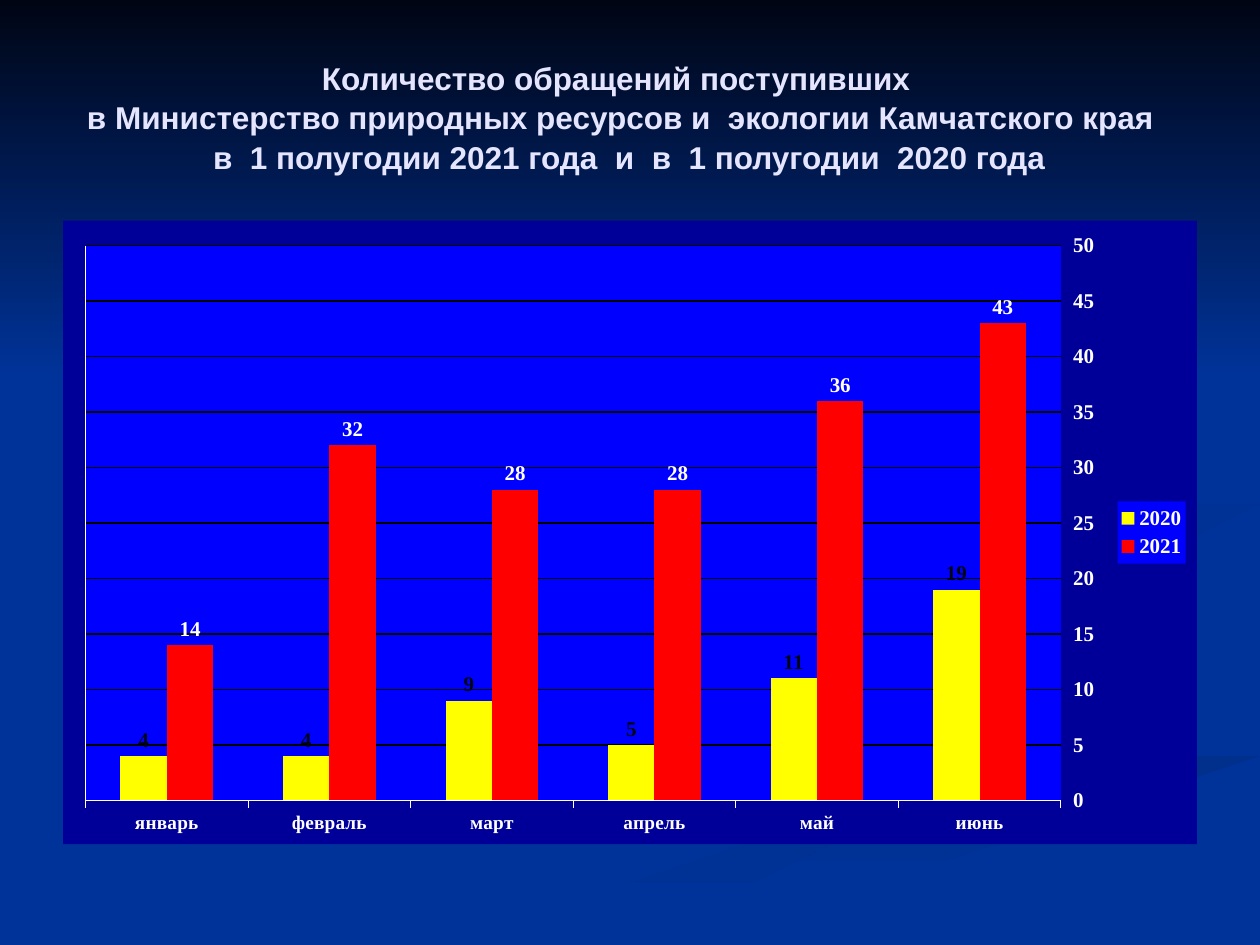
from dataclasses import dataclass

from pptx import Presentation
from pptx.chart.data import CategoryChartData
from pptx.dml.color import RGBColor
from pptx.enum.chart import XL_CHART_TYPE, XL_LABEL_POSITION, XL_LEGEND_POSITION, XL_TICK_LABEL_POSITION, XL_TICK_MARK
from pptx.enum.text import MSO_ANCHOR, PP_ALIGN
from pptx.oxml import parse_xml
from pptx.oxml.ns import nsdecls, qn
from pptx.util import Cm, Pt


@dataclass(frozen=True)
class Theme:
    background: str = "003399"
    shade: str = "002F8C"
    night: str = "000514"
    title: str = "E5E5FF"
    frame: str = "000099"
    plot: str = "0000FF"
    light: str = "FFFFFF"
    grid: str = "000000"
    title_font: str = "Arial"
    chart_font: str = "Times New Roman"
    title_size: int = 18
    chart_size: int = 10
    month_size: int = 11
    label_size: int = 12


@dataclass(frozen=True)
class Ribbon:
    points: tuple
    start: str
    end: str
    angle: int


@dataclass(frozen=True)
class Year:
    name: str
    values: tuple
    color: str
    label_color: str


THEME = Theme()
INCH = Cm(2.54)
MONTHS = ("январь", "февраль", "март", "апрель", "май", "июнь")
YEARS = (
    Year("2020", (4, 4, 9, 5, 11, 19), "FFFF00", THEME.night),
    Year("2021", (14, 32, 28, 28, 36, 43), "FF0000", THEME.light),
)
TITLE = (
    "Количество обращений поступивших ",
    "в Министерство природных ресурсов и  экологии Камчатского края",
    "  в  1 полугодии 2021 года  и  в  1 полугодии  2020 года",
)
RIBBONS = (
    Ribbon(((5.7, 4.6), (7.8, 5.5), (8, 5.8), (5.6, 6.65), (3.6, 7.49), (3, 7.49), (5, 6.6), (7.8, 5.8)),
           THEME.background, "003193", 0),
    Ribbon(((5.03, 7.49), (5.7, 7.49), (7.2, 6.8), (9.98, 6.09), (9.98, 5.81), (7.6, 6.5), (6, 7.06)),
           THEME.shade, THEME.background, 90),
    Ribbon(((7.81, 4.6), (8.26, 4.96), (8.1, 4.65), (9.98, 4.2), (9.98, 4.02), (8.2, 4.35)),
           "003091", THEME.background, 45),
    Ribbon(((0, 0), (0, 3.08), (10, 3.08), (10, 0)), THEME.night, THEME.background, 90),
)


def rgb(color: str) -> RGBColor:
    return RGBColor.from_string(color)


def style_font(font, *, size: int, color: str, name: str = THEME.chart_font, bold: bool = True) -> None:
    font.size, font.name, font.bold = Pt(size), name, bold
    font.color.rgb = rgb(color)


def draw_ribbon(page, ribbon: Ribbon) -> None:
    builder = page.shapes.build_freeform(*ribbon.points[0], scale=INCH)
    builder.add_line_segments(ribbon.points[1:], close=True)
    shape = builder.convert_to_shape()
    shape.shadow.inherit = False
    shape.line.fill.background()
    shape.fill.gradient()
    shape.fill.gradient_angle = -ribbon.angle % 360
    for stop, color in zip(shape.fill.gradient_stops, (ribbon.start, ribbon.end)):
        stop.color.rgb = rgb(color)


def add_text(page, lines: tuple, *, left, top, width, height, **font_format) -> None:
    box = page.shapes.add_textbox(left, top, width, height)
    box.text_frame.word_wrap = True
    box.text_frame.vertical_anchor = MSO_ANCHOR.MIDDLE
    para = box.text_frame.paragraphs[0]
    para.alignment = PP_ALIGN.CENTER
    para.line_spacing = 1.04
    for index, line in enumerate(lines):
        if index:
            para.add_line_break()
        span = para.add_run()
        span.text = line
        style_font(span.font, **font_format)


def solid_properties(color: str):
    return parse_xml(
        f'<c:spPr {nsdecls("c", "a")}><a:solidFill><a:srgbClr val="{color}"/></a:solidFill>'
        "<a:ln><a:noFill/></a:ln></c:spPr>"
    )


def manual_layout(x: float, y: float, width: float, height: float, *, inner: bool = False):
    target = '<c:layoutTarget val="inner"/>' if inner else ""
    sizes = "".join(f'<c:{key} val="{value}"/>' for key, value in zip("xywh", (x, y, width, height)))
    return parse_xml(
        f'<c:layout {nsdecls("c")}><c:manualLayout>{target}<c:xMode val="edge"/><c:yMode val="edge"/>'
        f"{sizes}</c:manualLayout></c:layout>"
    )


def place_chart_parts(chart) -> None:
    frame = chart._chartSpace.find(qn("c:chart"))
    plot_area, legend = frame.find(qn("c:plotArea")), frame.find(qn("c:legend"))
    for part in (plot_area, legend):
        for layout in part.findall(qn("c:layout")):
            part.remove(layout)
    plot_area.insert(0, manual_layout(0.02, 0.04, 0.86, 0.89, inner=True))
    plot_area.append(solid_properties(THEME.plot))
    legend.find(qn("c:legendPos")).addnext(manual_layout(0.93, 0.45, 0.06, 0.1))
    legend.find(qn("c:overlay")).addnext(solid_properties(THEME.plot))
    frame.addnext(solid_properties(THEME.frame))


def style_axis(axis, *, size: int, tick: XL_TICK_MARK) -> None:
    style_font(axis.tick_labels.font, size=size, color=THEME.light)
    axis.major_tick_mark, axis.minor_tick_mark = tick, XL_TICK_MARK.NONE
    axis.format.line.color.rgb = rgb(THEME.light)
    axis.format.line.width = Pt(0.75)


def add_requests_chart(page) -> None:
    data = CategoryChartData()
    data.categories = MONTHS
    for year in YEARS:
        data.add_series(year.name, year.values)
    chart = page.shapes.add_chart(
        XL_CHART_TYPE.COLUMN_CLUSTERED, Cm(1.27), Cm(4.45), Cm(22.86), Cm(12.57), data
    ).chart
    style_font(chart.font, size=THEME.chart_size, color=THEME.light, bold=False)
    chart.has_title = False
    style_axis(chart.category_axis, size=THEME.month_size, tick=XL_TICK_MARK.OUTSIDE)
    scale = chart.value_axis
    style_axis(scale, size=THEME.label_size, tick=XL_TICK_MARK.NONE)
    scale.minimum_scale, scale.maximum_scale, scale.major_unit = 0, 50, 5
    scale.tick_label_position = XL_TICK_LABEL_POSITION.HIGH
    scale.major_gridlines.format.line.color.rgb = rgb(THEME.grid)
    scale.major_gridlines.format.line.width = Pt(0.75)
    plot = chart.plots[0]
    plot.gap_width, plot.overlap, plot.vary_by_categories = 150, 0, False
    for series, year in zip(plot.series, YEARS):
        series.invert_if_negative = False
        series.format.fill.solid()
        series.format.fill.fore_color.rgb = rgb(year.color)
        labels = series.data_labels
        labels.show_value, labels.position = True, XL_LABEL_POSITION.OUTSIDE_END
        style_font(labels.font, size=THEME.label_size, color=year.label_color)
    chart.has_legend = True
    chart.legend.position = XL_LEGEND_POSITION.RIGHT
    chart.legend.include_in_layout = False
    style_font(chart.legend.font, size=THEME.label_size, color=THEME.light)
    place_chart_parts(chart)


def main() -> None:
    """Build the slide comparing requests received in the first halves of 2020 and 2021."""
    deck = Presentation()
    deck.slide_width, deck.slide_height = Cm(25.4), Cm(19.05)
    page = deck.slides.add_slide(deck.slide_layouts[6])
    page.background.fill.solid()
    page.background.fill.fore_color.rgb = rgb(THEME.background)
    for ribbon in RIBBONS:
        draw_ribbon(page, ribbon)
    add_text(page, TITLE, left=Cm(0.89), top=Cm(0.76), width=Cm(23.24), height=Cm(3.18),
             size=THEME.title_size, color=THEME.title, name=THEME.title_font)
    add_requests_chart(page)
    deck.save("out.pptx")


if __name__ == "__main__":
    main()
